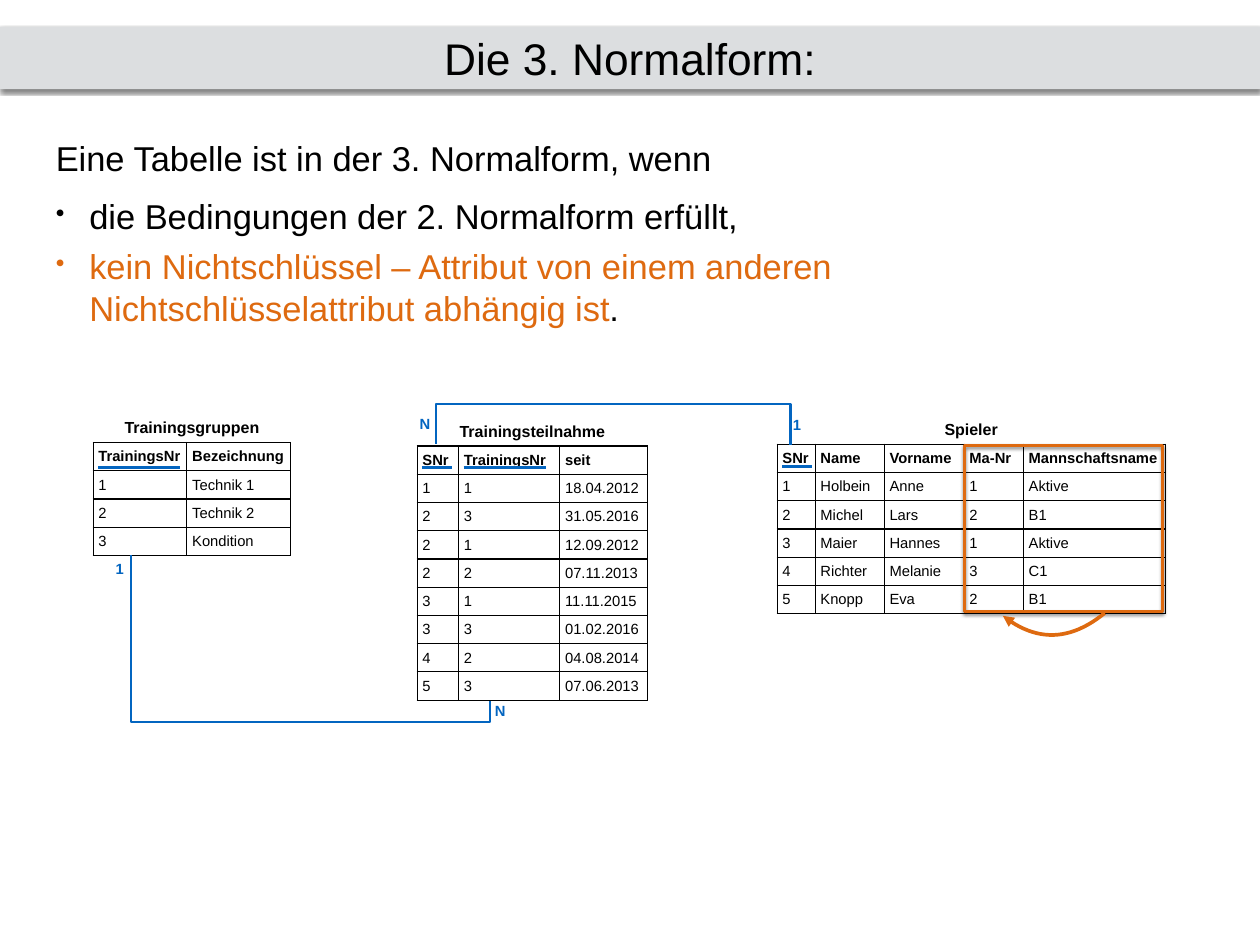
import pptx
import pptx.dml.color
import pptx.enum.shapes
import pptx.enum.text
import pptx.oxml
import pptx.oxml.ns
import pptx.util
from pptx.util import Cm

BLACK, WHITE, GREY, BLUE, ORANGE = "000000", "FFFFFF", "DCDEE0", "0365C0", "DE6A10"
INSET = Cm(0.15)
HEADING_HEIGHT, ROW_HEIGHT = 0.83, 0.81
KEY_LENGTHS = {"SNr": 0.85, "TrainingsNr": 2.36}
MIDDLE = pptx.enum.text.MSO_ANCHOR.MIDDLE
CENTER = pptx.enum.text.PP_ALIGN.CENTER
LEFT = pptx.enum.text.PP_ALIGN.LEFT


def color(value):
    return pptx.dml.color.RGBColor.from_string(value)


def add_xml(parent, tag, content="", **attributes):
    listed = " ".join(f'{name}="{value}"' for name, value in attributes.items())
    namespace = pptx.oxml.ns.nsdecls("a")
    element = pptx.oxml.parse_xml(f"<a:{tag} {namespace} {listed}>{content}</a:{tag}>")
    parent.append(element)
    return element


def style_font(paragraph, size, value=BLACK, bold=False):
    font = paragraph.font
    font.name, font.size, font.bold = "Arial", pptx.util.Pt(size), bold
    font.color.rgb = color(value)


def set_insets(holder):
    holder.margin_left = holder.margin_right = INSET
    holder.margin_top = holder.margin_bottom = INSET
    holder.vertical_anchor = MIDDLE


def style_line(line, value, width):
    line.color.rgb = color(value)
    line.width = pptx.util.Pt(width)


def cast_shadow(shape):
    shape.shadow.inherit = False
    effects = shape._element.spPr.find(pptx.oxml.ns.qn("a:effectLst"))
    add_xml(effects, "outerShdw", '<a:srgbClr val="000000"><a:alpha val="50000"/></a:srgbClr>',
            blurRad=38100, dist=25400, dir=5400000, rotWithShape=0)


def draw_path(slide, points, value, width):
    scaled = [(Cm(x), Cm(y)) for x, y in points]
    builder = slide.shapes.build_freeform(*scaled[0])
    builder.add_line_segments(scaled[1:], close=False)
    path = builder.convert_to_shape()
    path.fill.background()
    path.shadow.inherit = False
    style_line(path.line, value, width)
    return path


def place_title(slide, box):
    title = slide.shapes.title
    title.left, title.top, title.width, title.height = map(Cm, box)
    title.fill.solid()
    title.fill.fore_color.rgb = color(GREY)
    title.line.fill.background()
    cast_shadow(title)
    frame = title.text_frame
    frame.text = "Die 3. Normalform:"
    frame.word_wrap = True
    set_insets(frame)
    frame.paragraphs[0].alignment = CENTER
    style_font(frame.paragraphs[0], 36)


def place_definition(slide, box):
    frame = slide.shapes.add_textbox(*map(Cm, box)).text_frame
    frame.word_wrap = True
    set_insets(frame)
    intro = frame.paragraphs[0]
    intro.text = "Eine Tabelle ist in der 3. Normalform, wenn"
    style_font(intro, 28)
    conditions = [
        (14, [("die Bedingungen der 2. Normalform erfüllt,", BLACK)]),
        (7, [("kein Nichtschlüssel – Attribut von einem anderen "
              "Nichtschlüsselattribut abhängig ist", ORANGE), (".", BLACK)]),
    ]
    for space, parts in conditions:
        condition = frame.add_paragraph()
        condition.space_before = pptx.util.Pt(space)
        style_font(condition, 28)
        for text, value in parts:
            part = condition.add_run()
            part.text = text
            part.font.color.rgb = color(value)
        properties = condition._p.get_or_add_pPr()
        properties.set("marL", str(Cm(0.96)))
        properties.set("indent", str(-Cm(0.96)))
        bullet_size = add_xml(properties, "buSzPct", val=75000)
        bullet = add_xml(properties, "buChar", char="•")
        properties.insert(0, bullet)
        properties.insert(0, bullet_size)
        spacing = properties.find(pptx.oxml.ns.qn("a:spcBef"))
        properties.insert(0, spacing)


def fill_cell(cell, text, size, bold, alignment, borders):
    cell.text = text
    set_insets(cell)
    cell.text_frame.paragraphs[0].alignment = alignment
    style_font(cell.text_frame.paragraphs[0], size, bold=bold)
    for side in borders:
        add_xml(cell._tc.get_or_add_tcPr(), f"ln{side}",
                '<a:solidFill><a:srgbClr val="000000"/></a:solidFill>', w=12700)
    cell.fill.solid()
    cell.fill.fore_color.rgb = color(WHITE)


def place_relation(slide, left, top, heading, widths, rows, key_drop):
    height = HEADING_HEIGHT + ROW_HEIGHT * len(rows)
    box = left, top, sum(widths), height
    relation = slide.shapes.add_table(len(rows) + 1, len(widths), *map(Cm, box)).table
    relation.first_row = relation.horz_banding = False
    for column, width in zip(relation.columns, widths):
        column.width = Cm(width)
    for index, row in enumerate(relation.rows):
        row.height = Cm(ROW_HEIGHT if index else HEADING_HEIGHT)
    for index in range(len(widths)):
        fill_cell(relation.cell(0, index), "" if index else heading, 13, True, CENTER, "B")
    relation.cell(0, 0).merge(relation.cell(0, len(widths) - 1))
    for row_index, row in enumerate(rows, 1):
        for index, text in enumerate(row):
            fill_cell(relation.cell(row_index, index), text, 12, row_index == 1, LEFT, "LRTB")
    key_y = Cm(top + HEADING_HEIGHT + key_drop)
    for index, attribute in enumerate(rows[0]):
        if attribute in KEY_LENGTHS:
            start = left + sum(widths[:index]) + 0.14
            key = slide.shapes.add_connector(
                pptx.enum.shapes.MSO_CONNECTOR.STRAIGHT,
                Cm(start), key_y, Cm(start + KEY_LENGTHS[attribute]), key_y)
            style_line(key.line, BLUE, 3)
            add_xml(key._element.spPr, "effectLst")


def place_link(slide, box, left_end, right_end, shelf, cardinalities):
    left, top, width, _ = box
    right = left + width
    draw_path(slide, [(right, top + right_end), (right, top + shelf),
                      (left, top + shelf), (left, top + left_end)], BLUE, 2)
    for text, x, y in cardinalities:
        frame = slide.shapes.add_textbox(
            Cm(left + x - 0.3), Cm(top + y - 0.4), Cm(0.6), Cm(0.8)).text_frame
        frame.word_wrap = False
        set_insets(frame)
        frame.text = text
        frame.paragraphs[0].alignment = CENTER
        style_font(frame.paragraphs[0], 12, BLUE, True)


def place_dependency(slide, box):
    left, top, _, height = box
    frame = slide.shapes.add_shape(pptx.enum.shapes.MSO_SHAPE.RECTANGLE, *map(Cm, box))
    frame.fill.background()
    style_line(frame.line, ORANGE, 2.5)
    cast_shadow(frame)
    controls = [(4.01, 0.05), (3.02, 0.86), (2.06, 0.89), (1.09, 0.13)]
    steps = 24
    curve = []
    for step in range(steps + 1):
        t = step / steps
        weights = (1 - t) ** 3, 3 * t * (1 - t) ** 2, 3 * t ** 2 * (1 - t), t ** 3
        x, y = (sum(w * c[axis] for w, c in zip(weights, controls)) for axis in (0, 1))
        curve.append((left + x, top + height + y))
    arrow = draw_path(slide, curve, ORANGE, 3)
    add_xml(arrow.line._get_or_add_ln(), "tailEnd", type="triangle")


def main():
    deck = pptx.Presentation()
    deck.slide_width, deck.slide_height = Cm(36.12), Cm(27.1)
    slide = deck.slides.add_slide(deck.slide_layouts[5])
    place_title(slide, (0, 0.76, 36.12, 1.8))
    place_relation(slide, 11.96, 11.96, "Trainingsteilnahme", [1.19, 2.9, 2.51], [
        ("SNr", "TrainingsNr", "seit"),
        ("1", "1", "18.04.2012"), ("2", "3", "31.05.2016"),
        ("2", "1", "12.09.2012"), ("2", "2", "07.11.2013"),
        ("3", "1", "11.11.2015"), ("3", "3", "01.02.2016"),
        ("4", "2", "04.08.2014"), ("5", "3", "07.06.2013")], 0.62)
    place_relation(slide, 22.28, 11.91, "Spieler", [1.09, 1.98, 2.29, 1.7, 4.06], [
        ("SNr", "Name", "Vorname", "Ma-Nr", "Mannschaftsname"),
        ("1", "Holbein", "Anne", "1", "Aktive"), ("2", "Michel", "Lars", "2", "B1"),
        ("3", "Maier", "Hannes", "1", "Aktive"), ("4", "Richter", "Melanie", "3", "C1"),
        ("5", "Knopp", "Eva", "2", "B1")], 0.64)
    place_relation(slide, 2.67, 11.86, "Trainingsgruppen", [2.69, 2.97], [
        ("TrainingsNr", "Bezeichnung"),
        ("1", "Technik 1"), ("2", "Technik 2"), ("3", "Kondition")], 0.72)
    place_link(slide, (12.5, 11.58, 10.16, 1.17), 1.15, 1.17, 0,
               [("N", -0.32, 0.58), ("1", 10.35, 0.6)])
    place_link(slide, (3.76, 15.93, 10.29, 4.77), 0, 4.16, 4.77,
               [("N", 10.58, 4.45), ("1", -0.33, 0.39)])
    place_definition(slide, (1.45, 3.76, 23.19, 5.82))
    place_dependency(slide, (27.66, 12.78, 5.66, 4.75))
    deck.save("out.pptx")


if __name__ == "__main__":
    main()
